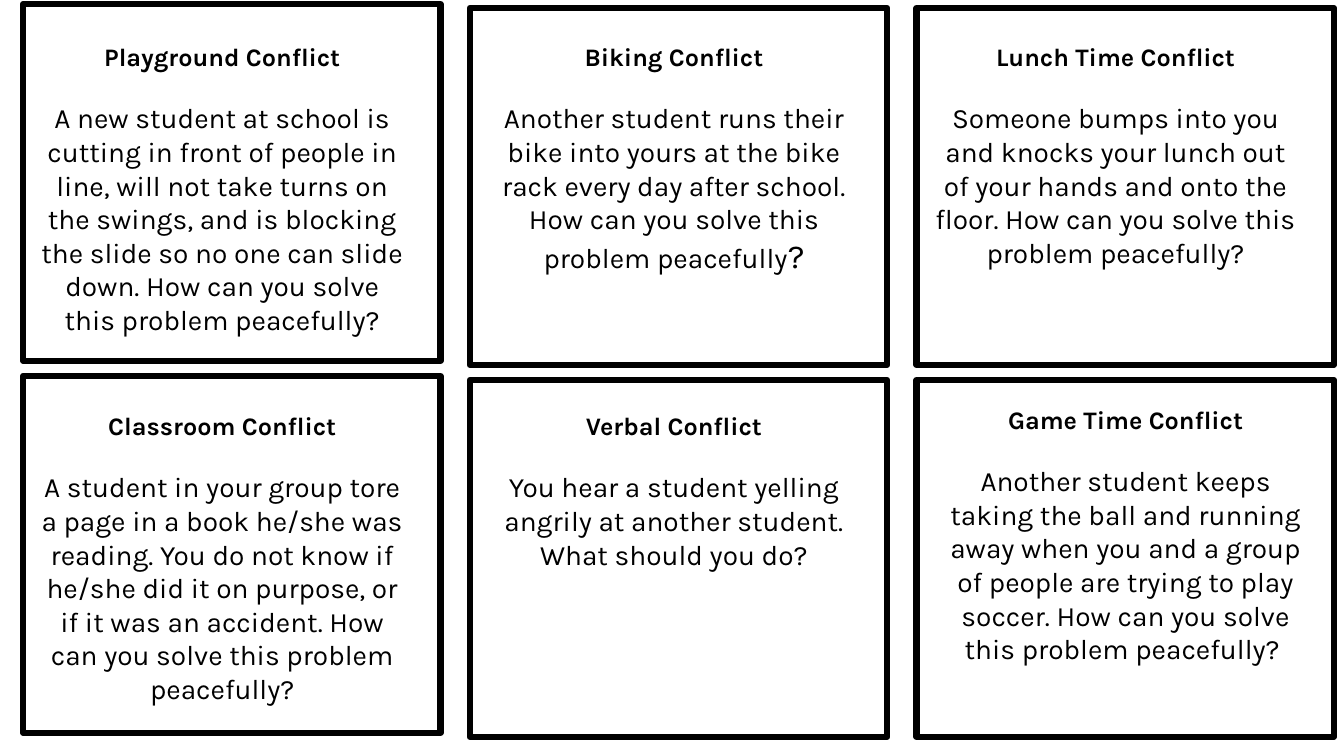
import pptx
import pptx.util
import pptx.dml.color
import pptx.enum.shapes
import pptx.enum.text

Inches, Pt = pptx.util.Inches, pptx.util.Pt
COLORS = {"paper": "FFFFFF", "ink": "000000"}
FONT = "Karla"
COLUMN_PITCH, ROW_PITCH = 4.43, 3.69
CARD_WIDTH, CARD_HEIGHT = 4.14, 3.54
GRID_LEFT = 0.23
COLUMN_TOPS = (0.04, 0.08, 0.08)
TEXT_WIDTH = 3.83

# column, row, text inset, text height, title, body pieces with sizes
CARDS = [
    (0, 0, (0.06, 0.32), 3.37, "Playground Conflict",
     [("A new student at school is cutting in front of people in line, will not take turns on "
       "the swings, and is blocking the slide so no one can slide down. How can you solve this "
       "problem peacefully?", 20)]),
    (1, 0, (0.11, 0.28), 2.76, "Biking Conflict",
     [("Another student runs their bike into yours at the bike rack every day after school. "
       "How can you solve this problem peacefully", 20), ("?", 24)]),
    (2, 0, (0.06, 0.28), 2.73, "Lunch Time Conflict",
     [("Someone bumps into you and knocks your lunch out of your hands and onto the floor. "
       "How can you solve this problem peacefully?", 20)]),
    (0, 1, (0.06, 0.29), 3.03, "Classroom Conflict",
     [("A student in your group tore a page in a book he/she was reading. You do not know if "
       "he/she did it on purpose, or if it was an accident. How can you solve this problem "
       "peacefully?", 20)]),
    (1, 1, (0.11, 0.25), 2.02, "Verbal Conflict",
     [("You hear a student yelling angrily at another student. What should you do?", 20)]),
    (2, 1, (0.16, 0.19), 2.73, "Game Time Conflict",
     [("Another student keeps taking the ball and running away when you and a group of people "
       "are trying to play soccer. How can you solve this problem peacefully? ", 20)]),
]


def color(name):
    return pptx.dml.color.RGBColor.from_string(COLORS[name])


def add_run(paragraph, text, size, bold=False):
    run = paragraph.add_run()
    run.text = text
    run.font.name = FONT
    run.font.size = Pt(size)
    run.font.bold = bold
    run.font.color.rgb = color("ink")


def add_frame(slide, left, top):
    frame = slide.shapes.add_shape(
        pptx.enum.shapes.MSO_SHAPE.RECTANGLE,
        Inches(left), Inches(top), Inches(CARD_WIDTH), Inches(CARD_HEIGHT))
    frame.shadow.inherit = False
    frame.fill.solid()
    frame.fill.fore_color.rgb = color("paper")
    frame.line.color.rgb = color("ink")
    frame.line.width = Pt(4.5)


def add_card(slide, left, top, inset, text_height, title, body):
    add_frame(slide, left, top)
    scenario = slide.shapes.add_textbox(
        Inches(left + inset[0]), Inches(top + inset[1]),
        Inches(TEXT_WIDTH), Inches(text_height)).text_frame
    scenario.word_wrap = True
    scenario.auto_size = pptx.enum.text.MSO_AUTO_SIZE.SHAPE_TO_FIT_TEXT
    heading = scenario.paragraphs[0]
    story = scenario.add_paragraph()
    story.space_before = Pt(21)
    for paragraph in (heading, story):
        paragraph.alignment = pptx.enum.text.PP_ALIGN.CENTER
    add_run(heading, title, 18, bold=True)
    for text, size in body:
        add_run(story, text, size)


def main():
    deck = pptx.Presentation()
    deck.slide_width, deck.slide_height = Inches(13.33), Inches(7.5)
    slide = deck.slides.add_slide(deck.slide_layouts[6])
    for column, row, *content in CARDS:
        left = GRID_LEFT + column * COLUMN_PITCH
        top = COLUMN_TOPS[column] + row * ROW_PITCH
        add_card(slide, left, top, *content)
    deck.save("out.pptx")


if __name__ == "__main__":
    main()
